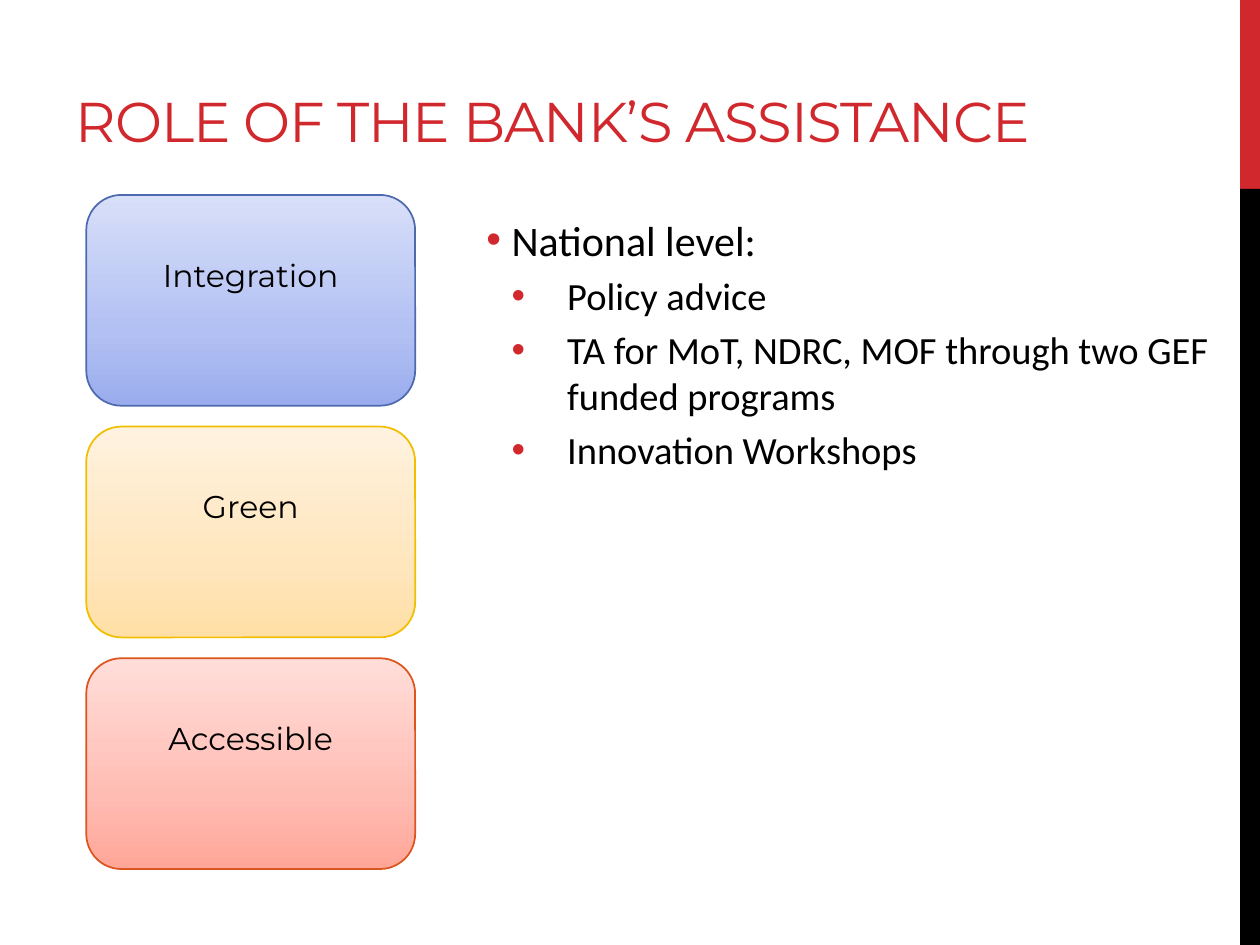
import copy

import pptx
import pptx.dml.color
import pptx.enum.shapes
import pptx.enum.text
import pptx.oxml
import pptx.oxml.ns
import pptx.util
from pptx.util import Cm, Pt

RED, BLACK = "D1282E", "000000"
TITLE = "ROLE OF THE BANK’S ASSISTANCE"
BULLETS = [
    (0, "National level:"),
    (1, "Policy advice"),
    (1, "TA for MoT, NDRC, MOF through two GEF funded programs"),
    (1, "Innovation Workshops"),
]
# Per level: text size, left margin and hanging indent in cm
LEVELS = [(24, 1.27, 0.51), (22, 2.39, 1.12)]
# Label, outline, gradient colours from bottom to top
CARDS = [
    ("Integration", "4E6AAE", ("9AACED", "B2C0F3", "D8DFF9")),
    ("Green", "F1BE00", ("FFDFA5", "FFE6BD", "FFF2DF")),
    ("Accessible", "DC551F", ("FFA698", "FFBCB3", "FFDED9")),
]
GRADIENT_POSITIONS = (0, 0.35, 1)
CARD_LEFT, CARD_TOP, CARD_WIDTH, CARD_HEIGHT, CARD_GAP = 1.74, 3.93, 6.63, 4.25, 0.42
# Top and height of each part of the side stripe, in cm
STRIPES = [(0, 3.81, RED), (3.81, 15.24, BLACK)]


def rgb(value):
    return pptx.dml.color.RGBColor.from_string(value)


def place(shape, left, top, width, height):
    shape.left, shape.top = Cm(left), Cm(top)
    shape.width, shape.height = Cm(width), Cm(height)


def style_text(paragraph, font, size, color):
    for span in paragraph.runs:
        span.font.name, span.font.size = font, Pt(size)
        span.font.color.rgb = rgb(color)


def add_bullet(paragraph, color, margin, hanging):
    properties = paragraph._p.get_or_add_pPr()
    properties.set("marL", str(Cm(margin)))
    properties.set("indent", str(-Cm(hanging)))
    namespace = pptx.oxml.ns.nsdecls("a")
    for xml in (
        f'<a:buClr {namespace}><a:srgbClr val="{color}"/></a:buClr>',
        f'<a:buFont {namespace} typeface="Arial"/>',
        f'<a:buChar {namespace} char="•"/>',
    ):
        properties.append(pptx.oxml.parse_xml(xml))


def fill_gradient(shape, colors):
    shape.fill.gradient()
    shape.fill.gradient_angle = 90
    stop_list = shape._element.spPr.find(".//" + pptx.oxml.ns.qn("a:gsLst"))
    stop_list.append(copy.deepcopy(stop_list[-1]))
    for stop, position, color in zip(shape.fill.gradient_stops, GRADIENT_POSITIONS, colors):
        stop.position = position
        stop.color.rgb = rgb(color)


def add_stripes(slide):
    for top, height, color in STRIPES:
        stripe = slide.shapes.add_shape(
            pptx.enum.shapes.MSO_SHAPE.RECTANGLE, Cm(25), Cm(top), Cm(0.4), Cm(height))
        stripe.shadow.inherit = False
        stripe.fill.solid()
        stripe.fill.fore_color.rgb = rgb(color)
        stripe.line.fill.background()


def write_title(title):
    place(title, 1.27, 1.47, 22.86, 1.68)
    frame = title.text_frame
    frame.text = TITLE
    frame.auto_size = pptx.enum.text.MSO_AUTO_SIZE.NONE
    frame.vertical_anchor = pptx.enum.text.MSO_ANCHOR.BOTTOM
    frame.margin_bottom = Cm(0.05)
    para = frame.paragraphs[0]
    para.alignment = pptx.enum.text.PP_ALIGN.LEFT
    style_text(para, "Montserrat", 32, RED)
    para.runs[0]._r.get_or_add_rPr().set("spc", "-60")


def write_body(body):
    place(body, 8.79, 4.19, 16.41, 14.43)
    frame = body.text_frame
    frame.text = "\n".join(text for _, text in BULLETS)
    frame.auto_size = pptx.enum.text.MSO_AUTO_SIZE.NONE
    for para, (level, _) in zip(frame.paragraphs, BULLETS):
        size, margin, hanging = LEVELS[level]
        para.level = level
        para.space_before = Pt(size * 0.2)
        add_bullet(para, RED, margin, hanging)
        style_text(para, "Calibri", size, BLACK)


def add_cards(slide):
    for index, (label, outline, colors) in enumerate(CARDS):
        top = CARD_TOP + index * (CARD_HEIGHT + CARD_GAP)
        card = slide.shapes.add_shape(
            pptx.enum.shapes.MSO_SHAPE.ROUNDED_RECTANGLE,
            Cm(CARD_LEFT), Cm(top), Cm(CARD_WIDTH), Cm(CARD_HEIGHT))
        card.shadow.inherit = False
        fill_gradient(card, colors)
        card.line.color.rgb = rgb(outline)
        card.line.width = Pt(1)
        frame = card.text_frame
        frame.text = label
        frame.vertical_anchor = pptx.enum.text.MSO_ANCHOR.MIDDLE
        # The deeper bottom margin lifts the label above the middle
        frame.margin_top, frame.margin_bottom = Cm(0.3), Cm(1.24)
        para = frame.paragraphs[0]
        para.alignment = pptx.enum.text.PP_ALIGN.CENTER
        para.line_spacing = 0.9
        style_text(para, "Montserrat", 18, BLACK)


def main():
    deck = pptx.Presentation()
    deck.slide_width, deck.slide_height = Cm(25.4), Cm(19.05)
    slide = deck.slides.add_slide(deck.slide_layouts[1])
    write_title(slide.shapes.title)
    write_body(slide.placeholders[1])
    add_stripes(slide)
    add_cards(slide)
    deck.save("out.pptx")


if __name__ == "__main__":
    main()
